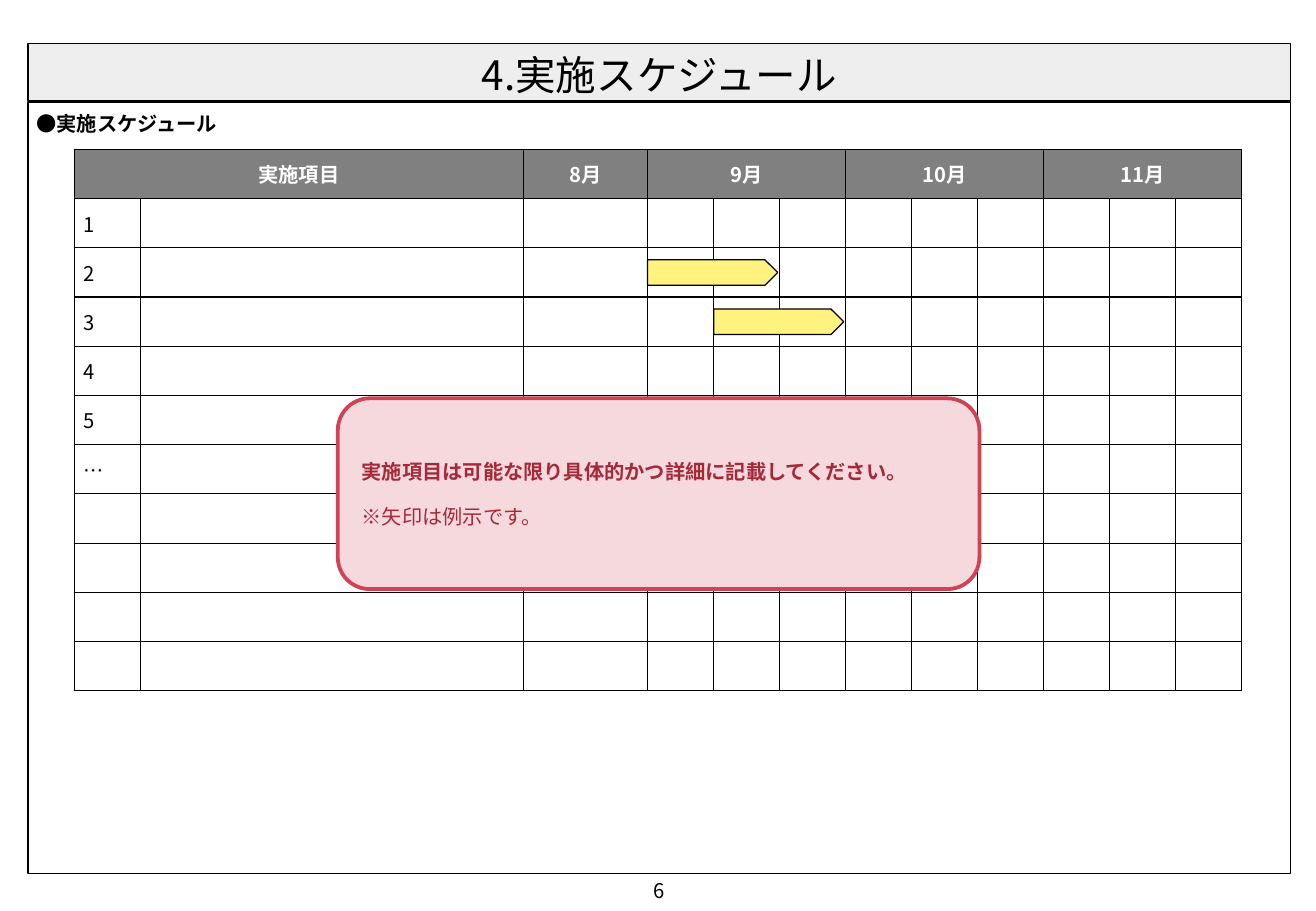
from lxml import etree
from pptx import Presentation
from pptx.dml.color import RGBColor
from pptx.enum.shapes import MSO_SHAPE
from pptx.enum.text import MSO_ANCHOR, MSO_AUTO_SIZE, PP_ALIGN
from pptx.oxml import parse_xml
from pptx.oxml.ns import nsdecls, qn
from pptx.util import Inches, Pt

# Content
TITLE = "4.実施スケジュール"
HEADING = "●実施スケジュール"
PAGE_NUMBER = "6"
HEADERS = [("実施項目", 2), ("8月", 1), ("9月", 3), ("10月", 3), ("11月", 3)]
ITEMS = ["1", "2", "3", "4", "5", "…", "", "", "", ""]
ARROWS = [(2, 3), (3, 4)]  # table row, first column
CALLOUT = [("実施項目は可能な限り具体的かつ詳細に記載してください。", True),
           ("※矢印は例示です。", False)]

# Style
FONT = "Noto Sans CJK JP"
BLACK = RGBColor(0x00, 0x00, 0x00)
WHITE = RGBColor(0xFF, 0xFF, 0xFF)
PALE_GRAY = RGBColor(0xEE, 0xEE, 0xEE)
HEADER_GRAY = RGBColor(0x80, 0x80, 0x80)
PINK = RGBColor(0xF6, 0xD9, 0xDD)
RED = RGBColor(0xD0, 0x42, 0x55)
DARK_RED = RGBColor(0xA5, 0x29, 0x39)
YELLOW = RGBColor(0xFF, 0xF2, 0x7F)
LEFT, CENTER = PP_ALIGN.LEFT, PP_ALIGN.CENTER
MIDDLE, TOP = MSO_ANCHOR.MIDDLE, MSO_ANCHOR.TOP
NO_FIT, FIT_SHAPE = MSO_AUTO_SIZE.NONE, MSO_AUTO_SIZE.SHAPE_TO_FIT_TEXT
RECTANGLE = MSO_SHAPE.RECTANGLE
ROUNDED = MSO_SHAPE.ROUNDED_RECTANGLE
PENTAGON = MSO_SHAPE.PENTAGON
SIDES = ("left", "top", "right", "bottom")

# Grid, in inches
TABLE_LEFT, TABLE_TOP, TABLE_WIDTH, TABLE_HEIGHT = 0.61, 1.23, 9.61, 4.46
FIRST_WIDTHS = [0.55, 3.15, 1.02]
PART_COUNT = 9
PART_WIDTH = (TABLE_WIDTH - sum(FIRST_WIDTHS)) / PART_COUNT
WIDTHS = FIRST_WIDTHS + [PART_WIDTH] * PART_COUNT
ROW_HEIGHT = TABLE_HEIGHT / (len(ITEMS) + 1)
ARROW_WIDTH, ARROW_HEIGHT = 1.07, 0.21


def inches(*lengths):
    return [Inches(length) for length in lengths]


def apply(target, values):
    for name, value in values.items():
        setattr(target, name, value)


def write(para, text, color=BLACK, align=LEFT, size=12, bold=False):
    para.alignment = align
    span = para.add_run()
    span.text = text
    apply(span.font, {"name": FONT, "size": Pt(size), "bold": bold})
    span.font.color.rgb = color
    east_asian = etree.SubElement(span.font._element, qn("a:ea"))
    east_asian.set("typeface", FONT)


def set_frame(frame, margins, anchor=MIDDLE, wrap=True, fit=NO_FIT):
    apply(frame, {"word_wrap": wrap, "auto_size": fit, "vertical_anchor": anchor})
    apply(frame, {f"margin_{side}": Inches(margin)
                  for side, margin in zip(SIDES, margins)})


def paint(shape, fill, line=BLACK, width=0.75):
    shape.fill.solid()
    shape.fill.fore_color.rgb = fill
    shape.line.color.rgb = line
    shape.line.width = Pt(width)


def add_block(page, kind, place, *colors):
    shape = page.shapes.add_shape(kind, *inches(*place))
    shape.shadow.inherit = False
    paint(shape, *colors)
    return shape


def add_label(page, place, text, margins, frame_format, **text_format):
    box = page.shapes.add_textbox(*inches(*place))
    set_frame(box.text_frame, margins, **frame_format)
    write(box.text_frame.paragraphs[0], text, **text_format)


def add_borders(cell):
    properties = cell._tc.get_or_add_tcPr()
    for index, side in enumerate("LRTB"):
        properties.insert(index, parse_xml(
            f'<a:ln{side} w="{Pt(0.75)}" {nsdecls("a")}><a:solidFill>'
            f'<a:srgbClr val="{BLACK}"/></a:solidFill></a:ln{side}>'))


def add_schedule(page):
    place = inches(TABLE_LEFT, TABLE_TOP, TABLE_WIDTH, TABLE_HEIGHT)
    table = page.shapes.add_table(len(ITEMS) + 1, len(WIDTHS), *place).table
    table.horz_banding = False
    for column, width in zip(table.columns, WIDTHS):
        column.width = Inches(width)
    for row in table.rows:
        row.height = Inches(ROW_HEIGHT)

    texts = {(row, 0): item for row, item in enumerate(ITEMS, 1)}
    start = 0
    for text, count in HEADERS:
        texts[0, start] = text
        if count > 1:
            table.cell(0, start).merge(table.cell(0, start + count - 1))
        start += count

    for row in range(len(ITEMS) + 1):
        for column in range(len(WIDTHS)):
            cell = table.cell(row, column)
            apply(cell, {"vertical_anchor": MIDDLE,
                         "margin_left": Inches(0.08), "margin_right": Inches(0.08)})
            para = cell.text_frame.paragraphs[0]
            text = texts.get((row, column))
            if row == 0:
                cell.fill.solid()
                cell.fill.fore_color.rgb = HEADER_GRAY
            else:
                cell.fill.background()
            if text and row == 0:
                write(para, text, WHITE, CENTER, bold=True)
            elif text:
                write(para, text)
            else:
                etree.SubElement(para._p, qn("a:endParaRPr")).set("sz", "1200")
            add_borders(cell)


def main():
    deck = Presentation()
    deck.slide_width, deck.slide_height = inches(10.83, 7.5)
    page = deck.slides.add_slide(deck.slide_layouts[5])

    # Title bar, page frame and labels
    title = page.shapes.title
    apply(title, dict(zip(("left", "top", "width", "height"),
                          inches(0.23, 0.36, 10.39, 0.47))))
    paint(title, PALE_GRAY)
    set_frame(title.text_frame, (0.08, 0.08, 0.08, 0.04))
    write(title.text_frame.paragraphs[0], TITLE, align=CENTER, size=24)
    add_block(page, RECTANGLE, (0.23, 0.84, 10.39, 6.35), WHITE)
    add_label(page, (5.17, 7.19, 0.51, 0.28), PAGE_NUMBER,
              (0.1, 0.05, 0.1, 0.05), {}, align=CENTER)
    add_label(page, (0.3, 0.92, 1.51, 0.2), HEADING, (0, 0, 0, 0),
              {"anchor": TOP, "wrap": False, "fit": FIT_SHAPE}, bold=True)

    add_schedule(page)

    # Callout
    callout = add_block(page, ROUNDED, (2.78, 3.28, 5.28, 1.57), PINK, RED, 2.25)
    frame = callout.text_frame
    set_frame(frame, (0.12, 0.04, 0.12, 0.04))
    for index, (text, bold) in enumerate(CALLOUT):
        para = frame.add_paragraph() if index else frame.paragraphs[0]
        para.space_before = Pt(12 if index else 0)
        write(para, text, DARK_RED, bold=bold)

    # Schedule arrows, centred in their rows
    for row, column in ARROWS:
        left = TABLE_LEFT + sum(WIDTHS[:column])
        top = TABLE_TOP + (row + 0.5) * ROW_HEIGHT - ARROW_HEIGHT / 2
        add_block(page, PENTAGON, (left, top, ARROW_WIDTH, ARROW_HEIGHT), YELLOW)

    deck.save("out.pptx")


if __name__ == "__main__":
    main()
